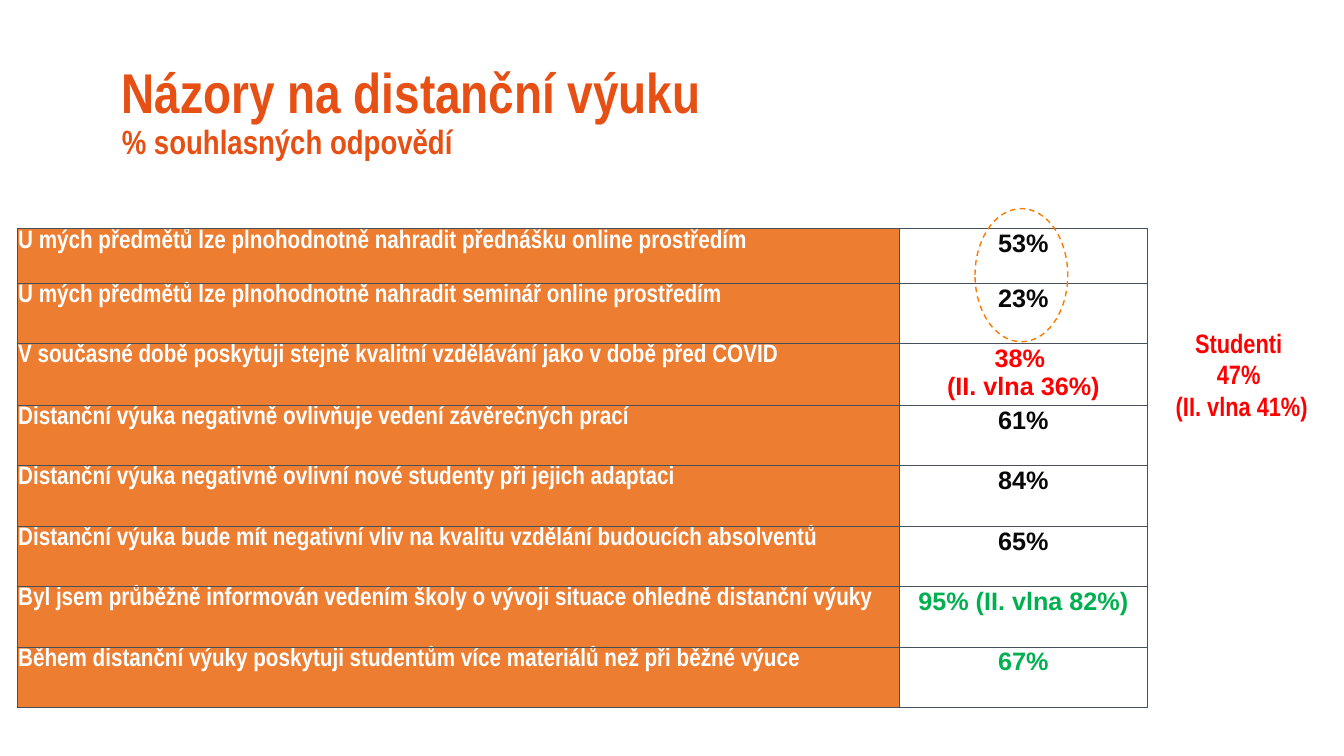
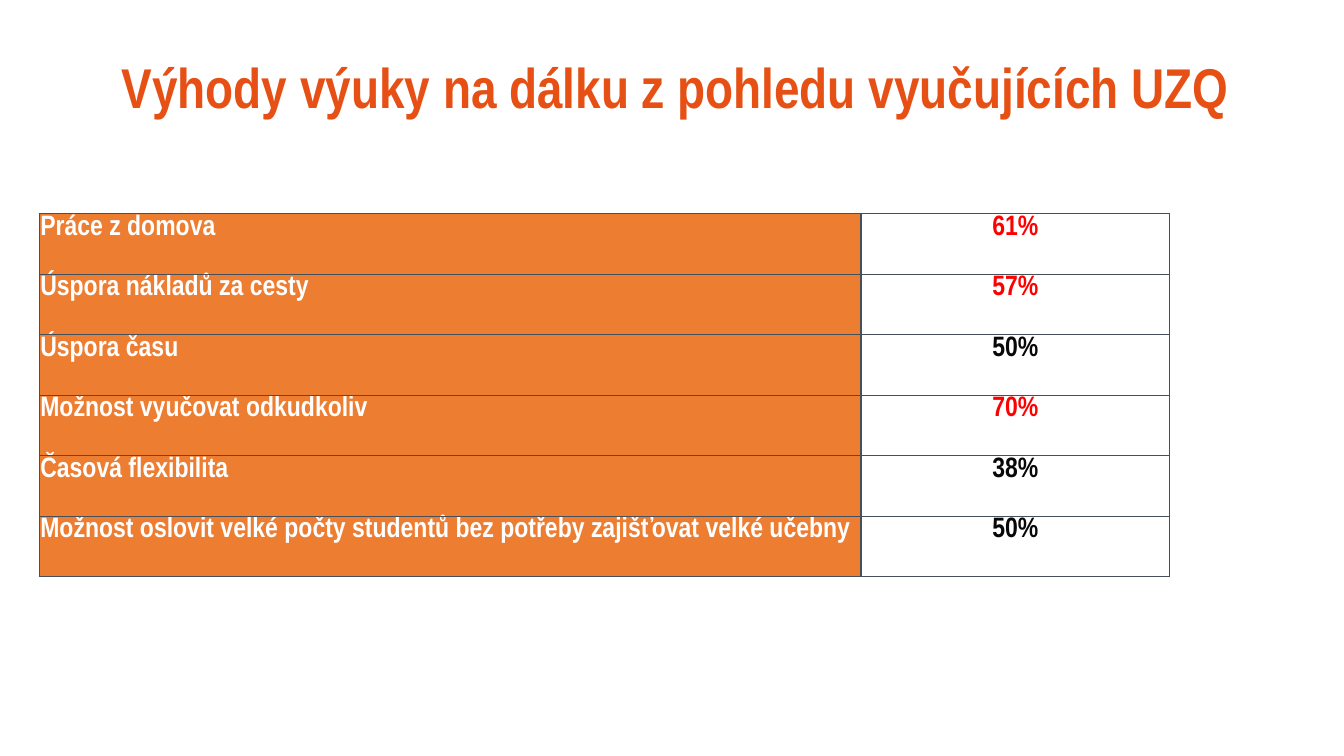
from lxml import etree
from pptx import Presentation
from pptx.dml.color import RGBColor
from pptx.enum.dml import MSO_LINE_DASH_STYLE as DASH
from pptx.enum.shapes import MSO_SHAPE as SHAPE
from pptx.enum.text import MSO_ANCHOR as ANCHOR, PP_ALIGN as ALIGN
from pptx.oxml import parse_xml
from pptx.oxml.ns import nsdecls
from pptx.util import Inches, Pt

NARROW, WIDE = "Arial Narrow", "Arial"
TITLE, LABEL_FILL, WHITE = "E65014", "ED7D31", "FFFFFF"
BORDER, RING = "46505A", "FF7800"
BLACK, RED, GREEN = "080808", "FF0000", "00B050"

SLIDES = [
    {
        "title": "Názory na distanční výuku",
        "subtitle": "% souhlasných odpovědí",
        "origin": (0.17, 2.27),
        "columns": (8.75, 2.46),
        "first_row": 0.54,
        "size": 18,
        "value_font": WIDE,
        "rows": [
            ("U mých předmětů lze plnohodnotně nahradit přednášku online prostředím", "53%", BLACK),
            ("U mých předmětů lze plnohodnotně nahradit seminář online prostředím", "23%", BLACK),
            ("V současné době poskytuji stejně kvalitní vzdělávání jako v době před COVID",
             "38% \n(II. vlna 36%)", RED),
            ("Distanční výuka negativně ovlivňuje vedení závěrečných prací", "61%", BLACK),
            ("Distanční výuka negativně ovlivní nové studenty při jejich adaptaci", "84%", BLACK),
            ("Distanční výuka bude mít negativní vliv na kvalitu vzdělání budoucích absolventů",
             "65%", BLACK),
            ("Byl jsem průběžně informován vedením školy o vývoji situace ohledně distanční výuky",
             "95% (II. vlna 82%)", GREEN),
            ("Během distanční výuky poskytuji studentům více materiálů než při běžné výuce",
             "67%", GREEN),
        ],
    },
    {
        "title": "Výhody výuky na dálku z pohledu vyučujících UZQ",
        "subtitle": None,
        "origin": (0.39, 2.12),
        "columns": (8.15, 3.06),
        "first_row": 0.6,
        "size": 20,
        "value_font": NARROW,
        "rows": [
            ("Práce z domova", "61%", RED),
            ("Úspora nákladů za cesty", "57%", RED),
            ("Úspora času", "50%", BLACK),
            ("Možnost vyučovat odkudkoliv", "70%", RED),
            ("Časová flexibilita", "38%", BLACK),
            ("Možnost oslovit velké počty studentů bez potřeby zajišťovat velké učebny",
             "50%", BLACK),
        ],
    },
]
ROW_HEIGHT = 0.6


def format_text(frame, font_name, size, color, align=ALIGN.LEFT):
    """Make all text in the frame bold, in one font, size, colour and alignment."""
    for paragraph in frame.paragraphs:
        paragraph.alignment = align
        for run in paragraph.runs:
            run.font.name = font_name
            run.font.size = Pt(size)
            run.font.bold = True
            run.font.color.rgb = RGBColor.from_string(color)


def fill_cell(cell, text, fill):
    """Set a cell's text, margins, thin borders and background."""
    cell.text_frame.text = text
    cell.margin_left = cell.margin_right = cell.margin_top = Inches(0.01)
    cell.margin_bottom = 0
    properties = cell._tc.get_or_add_tcPr()
    for side in ("lnL", "lnR", "lnT", "lnB"):
        border = parse_xml(f'<a:{side} {nsdecls("a")} w="{Pt(1)}"/>')
        solid = etree.SubElement(border, "{%s}solidFill" % border.nsmap["a"])
        etree.SubElement(solid, "{%s}srgbClr" % border.nsmap["a"], val=BORDER)
        properties.append(border)
    cell.fill.solid()
    cell.fill.fore_color.rgb = RGBColor.from_string(fill)


prs = Presentation()
prs.slide_width, prs.slide_height = Inches(13.33), Inches(7.5)

for content in SLIDES:
    slide = prs.slides.add_slide(prs.slide_layouts[6])

    heading = slide.shapes.add_textbox(
        Inches(1.11), Inches(0.4), Inches(11.31), Inches(1.45)).text_frame
    heading.word_wrap = True
    heading.vertical_anchor = ANCHOR.MIDDLE
    heading.text = content["title"]
    format_text(heading, NARROW, 40, TITLE)
    line = heading.paragraphs[0]
    line.line_spacing = 0.9
    if content["subtitle"]:
        line.add_line_break()
        line.add_run().text = content["subtitle"]
        format_text(heading, NARROW, 40, TITLE)
        line.runs[-1].font.size = Pt(24)
    else:
        heading.margin_bottom = Inches(0.5)

    rows, columns = content["rows"], content["columns"]
    left, top = content["origin"]
    height = content["first_row"] + ROW_HEIGHT * (len(rows) - 1)
    table = slide.shapes.add_table(
        len(rows), len(columns), Inches(left), Inches(top),
        Inches(sum(columns)), Inches(height)).table
    table.first_row = table.horz_banding = False
    for column, width in zip(table.columns, columns):
        column.width = Inches(width)
    for index, (label, value, color) in enumerate(rows):
        table.rows[index].height = Inches(ROW_HEIGHT if index else content["first_row"])
        label_cell, value_cell = table.cell(index, 0), table.cell(index, 1)
        fill_cell(label_cell, label, LABEL_FILL)
        format_text(label_cell.text_frame, NARROW, content["size"], WHITE)
        fill_cell(value_cell, value, WHITE)
        format_text(value_cell.text_frame, content["value_font"], content["size"],
                    color, ALIGN.CENTER)

opinions = prs.slides[0]
ring = opinions.shapes.add_shape(
    SHAPE.OVAL, Inches(9.67), Inches(2.07), Inches(0.92), Inches(1.32))
ring.shadow.inherit = False
ring.fill.background()
ring.line.color.rgb = RGBColor.from_string(RING)
ring.line.width = Pt(1)
ring.line.dash_style = DASH.DASH

students = opinions.shapes.add_textbox(
    Inches(11.54), Inches(3.19), Inches(1.55), Inches(1.06)).text_frame
students.word_wrap = True
students.text = "Studenti \n47% \n(II. vlna 41%)"
format_text(students, NARROW, 19, RED, ALIGN.CENTER)

prs.save("out.pptx")
